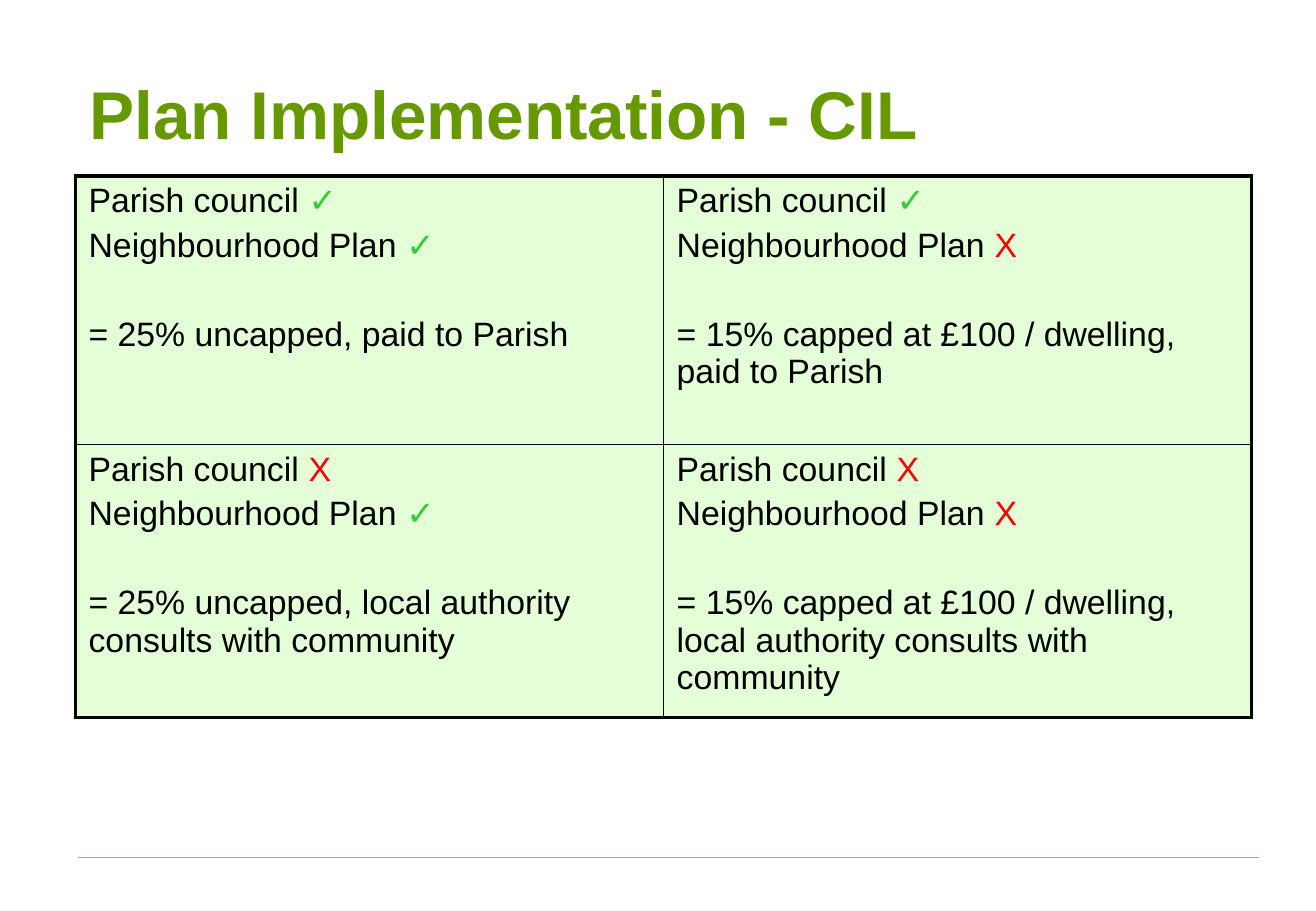
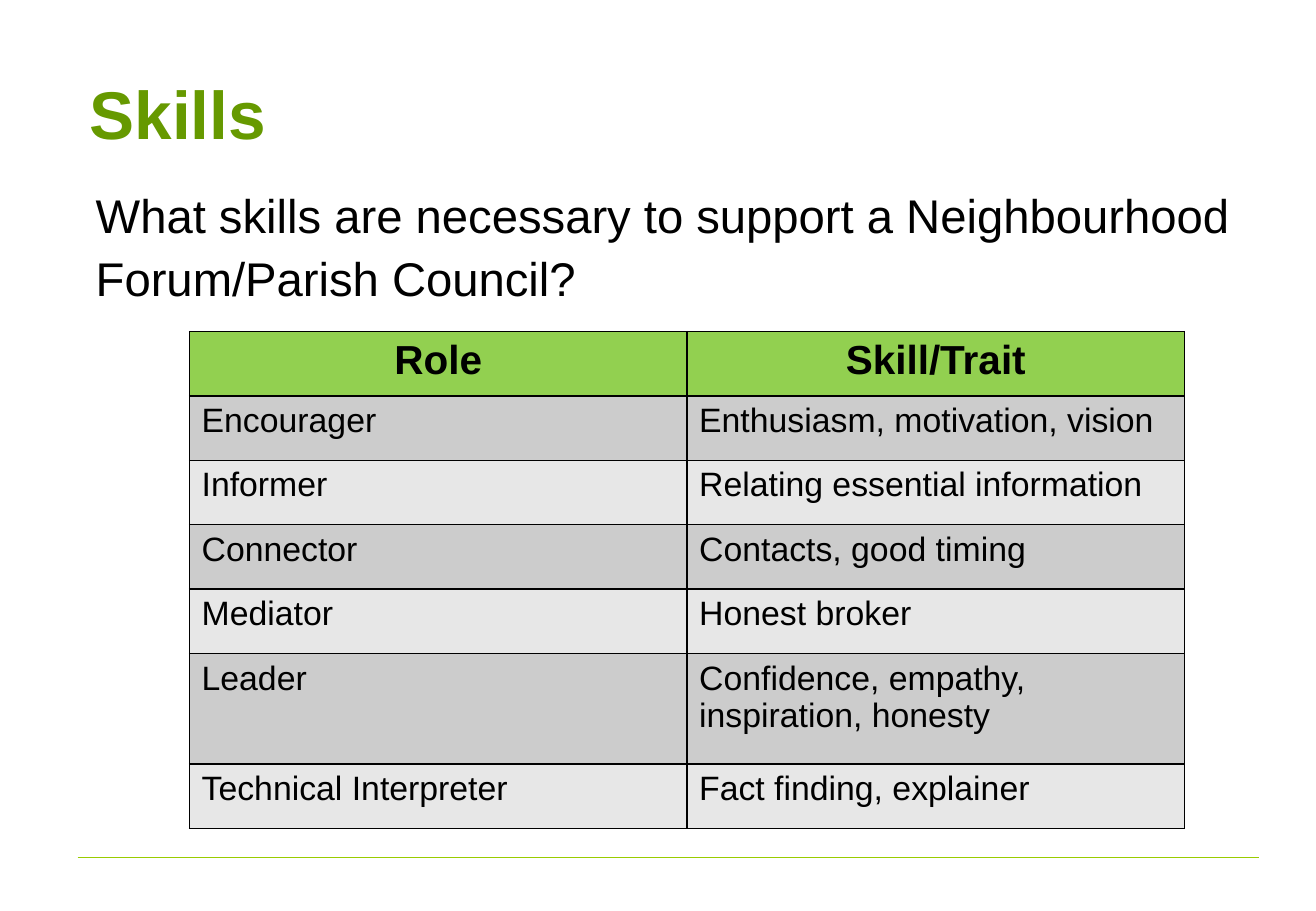
from dataclasses import dataclass
from typing import NamedTuple, Optional

from lxml.etree import SubElement
from pptx import Presentation
from pptx.dml.color import RGBColor
from pptx.enum.shapes import MSO_CONNECTOR
from pptx.enum.text import MSO_ANCHOR, PP_ALIGN
from pptx.oxml.ns import qn
from pptx.util import Emu, Inches, Pt


@dataclass(frozen=True)
class Theme:
    font: str = "Arial"
    title: str = "669900"
    text: str = "000000"
    rule: str = "99CC00"
    tick: str = "33CC33"
    cross: str = "FF0000"
    panel: str = "99FF66"
    panel_opacity: int = 26
    header: str = "92D050"
    bands: tuple[str, str] = ("CCCCCC", "E7E7E7")
    title_size: int = 40
    question_size: int = 28
    header_size: int = 24
    cell_size: int = 20
    thin: float = 1
    thick: float = 2.25


THEME = Theme()
WIDTH, HEIGHT = Inches(10.83), Inches(7.5)
GRID_COLUMNS = GRID_ROWS = 100


def across(columns: float) -> Emu:
    return Emu(round(WIDTH * columns / GRID_COLUMNS))


def down(rows: float) -> Emu:
    return Emu(round(HEIGHT * rows / GRID_ROWS))


class Box(NamedTuple):
    left: float
    top: float
    width: float
    height: float

    def lengths(self):
        return across(self.left), down(self.top), across(self.width), down(self.height)


class Edges(NamedTuple):
    left: float
    right: float
    top: float
    bottom: float


@dataclass(frozen=True)
class Funding:
    parish: bool
    plan: bool
    outcome: str


@dataclass(frozen=True)
class Skill:
    role: str
    trait: str
    height: float = 7.07


TITLE_BOX = Box(5.91, 4, 90.03, 16.67)
QUESTION_BOX = Box(6.37, 19.2, 93.26, 16)
RULE_LEFT, RULE_RIGHT, RULE_TOP = 5.91, 95.66, 94.13

FUNDING = (
    (
        Funding(True, True, "= 25% uncapped, paid to Parish"),
        Funding(True, False, "= 15% capped at £100 / dwelling, paid to Parish"),
    ),
    (
        Funding(False, True, "= 25% uncapped, local authority consults with community"),
        Funding(False, False, "= 15% capped at £100 / dwelling, local authority consults with community"),
    ),
)

SKILLS = (
    Skill("Role", "Skill/Trait"),
    Skill("Encourager", "Enthusiasm, motivation, vision"),
    Skill("Informer", "Relating essential information"),
    Skill("Connector", "Contacts, good timing"),
    Skill("Mediator", "Honest broker"),
    Skill("Leader", "Confidence, empathy, inspiration, honesty", 12.13),
    Skill("Technical Interpreter", "Fact finding, explainer"),
)


def style(paragraph, size: float, color: str = THEME.text, bold: bool = False) -> None:
    font = paragraph.font
    font.name, font.size, font.bold = THEME.font, Pt(size), bold
    font.color.rgb = RGBColor.from_string(color)


def add_text(slide, box: Box, text: str, size: float, color: str = THEME.text,
             bold: bool = False, anchor=MSO_ANCHOR.TOP, line_height: Optional[float] = None) -> None:
    frame = slide.shapes.add_textbox(*box.lengths()).text_frame
    frame.word_wrap = True
    frame.vertical_anchor = anchor
    paragraph = frame.paragraphs[0]
    paragraph.text = text
    style(paragraph, size, color, bold)
    if line_height:
        paragraph.line_spacing = Pt(line_height)


def add_titled_slide(presentation, title: str):
    slide = presentation.slides.add_slide(presentation.slide_layouts[6])
    rule = slide.shapes.add_connector(
        MSO_CONNECTOR.STRAIGHT,
        across(RULE_LEFT), down(RULE_TOP), across(RULE_RIGHT), down(RULE_TOP),
    )
    rule.line.color.rgb = RGBColor.from_string(THEME.rule)
    rule.line.width = Pt(0.75)
    SubElement(rule._element.spPr, qn("a:effectLst"))
    add_text(slide, TITLE_BOX, title, THEME.title_size, THEME.title, True, MSO_ANCHOR.MIDDLE)
    return slide


def add_grid_table(slide, left: float, top: float, width: float, heights: list[float]):
    box = Box(left, top, width, sum(heights))
    table = slide.shapes.add_table(len(heights), 2, *box.lengths()).table
    table.first_row = table.horz_banding = False
    for row, height in zip(table.rows, heights):
        row.height = down(height)
    return table


def dress_cell(cell, fill: str, edges: Edges, opacity: int = 100) -> None:
    properties = cell._tc.get_or_add_tcPr()
    for tag, width in zip(("a:lnL", "a:lnR", "a:lnT", "a:lnB"), edges):
        line = SubElement(properties, qn(tag), w=str(Pt(width)))
        SubElement(SubElement(line, qn("a:solidFill")), qn("a:srgbClr"), val=THEME.text)
    cell.fill.solid()
    cell.fill.fore_color.rgb = RGBColor.from_string(fill)
    if opacity < 100:
        color = properties.find(qn("a:solidFill")).find(qn("a:srgbClr"))
        SubElement(color, qn("a:alpha"), val=str(opacity * 1000))


def add_mark(paragraph, present: bool) -> None:
    run = paragraph.add_run()
    run.text = "✓" if present else "X"
    run.font.bold = present
    run.font.color.rgb = RGBColor.from_string(THEME.tick if present else THEME.cross)


def fill_funding(cell, funding: Funding) -> None:
    cell.margin_left = cell.margin_right = Inches(0.11)
    frame = cell.text_frame
    lines = (
        ("Parish council ", funding.parish, 4),
        ("Neighbourhood Plan ", funding.plan, 4),
        (funding.outcome, None, 30.5),
    )
    for index, (text, present, gap) in enumerate(lines):
        paragraph = frame.add_paragraph() if index else frame.paragraphs[0]
        paragraph.add_run().text = text
        paragraph.space_before = Pt(gap)
        style(paragraph, THEME.cell_size)
        if present is not None:
            add_mark(paragraph, present)


def build_funding_slide(presentation) -> None:
    slide = add_titled_slide(presentation, "Plan Implementation - CIL")
    table = add_grid_table(slide, 5.72, 19.33, 89.38, [29.47, 28.53])
    thin, thick = THEME.thin, THEME.thick
    for row, cases in enumerate(FUNDING):
        for column, funding in enumerate(cases):
            cell = table.cell(row, column)
            fill_funding(cell, funding)
            across_edges = (thin, thick) if column else (thick, thin)
            down_edges = (thin, thick) if row else (thick, thin)
            dress_cell(cell, THEME.panel, Edges(*across_edges, *down_edges), THEME.panel_opacity)


def build_skills_slide(presentation) -> None:
    slide = add_titled_slide(presentation, "Skills")
    add_text(
        slide, QUESTION_BOX,
        "What skills are necessary to support a Neighbourhood Forum/Parish Council?",
        THEME.question_size, line_height=37,
    )
    table = add_grid_table(slide, 14.4, 36.4, 75.62, [skill.height for skill in SKILLS])
    edges = Edges(*[THEME.thin] * 4)
    for row, skill in enumerate(SKILLS):
        is_header = row == 0
        fill = THEME.header if is_header else THEME.bands[(row - 1) % 2]
        for column, text in enumerate((skill.role, skill.trait)):
            cell = table.cell(row, column)
            paragraph = cell.text_frame.paragraphs[0]
            paragraph.text = text
            paragraph.alignment = PP_ALIGN.CENTER if is_header else PP_ALIGN.LEFT
            style(paragraph, THEME.header_size if is_header else THEME.cell_size, bold=is_header)
            dress_cell(cell, fill, edges)


def main() -> None:
    presentation = Presentation()
    presentation.slide_width, presentation.slide_height = WIDTH, HEIGHT
    build_funding_slide(presentation)
    build_skills_slide(presentation)
    presentation.save("out.pptx")


if __name__ == "__main__":
    main()
